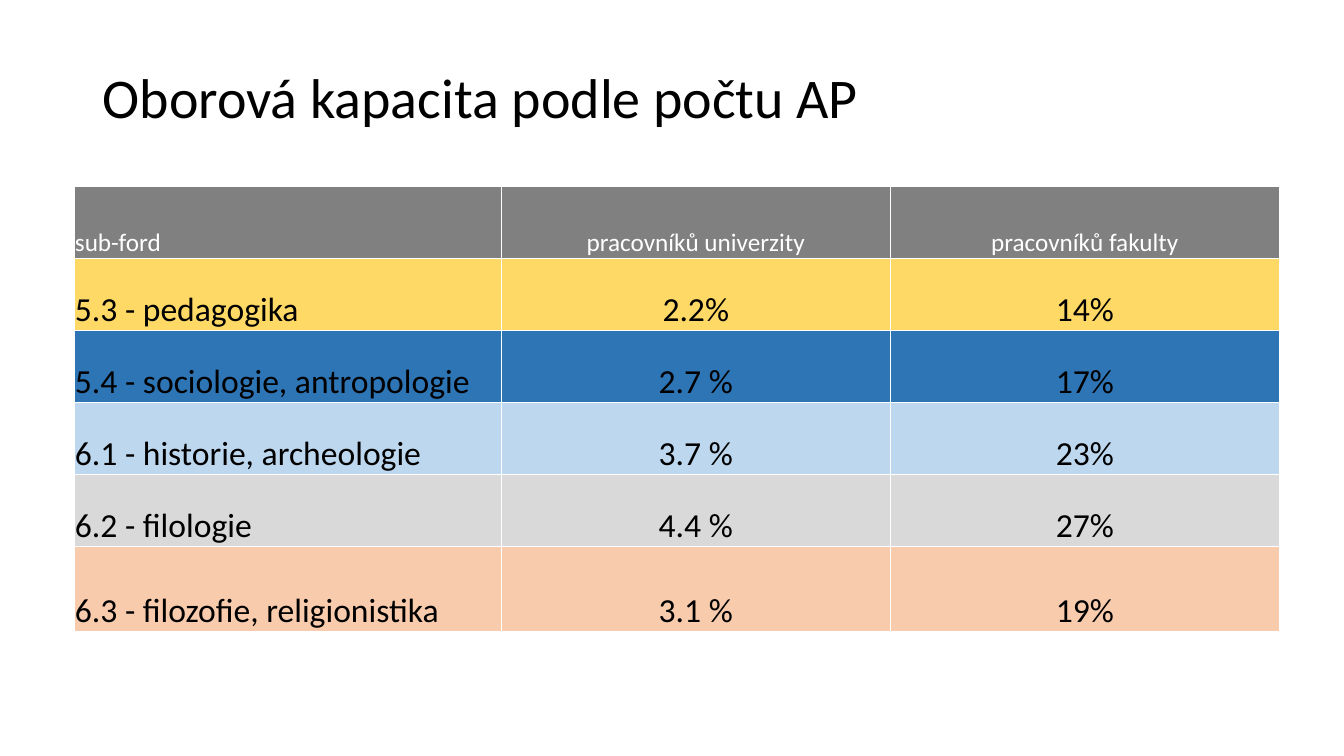
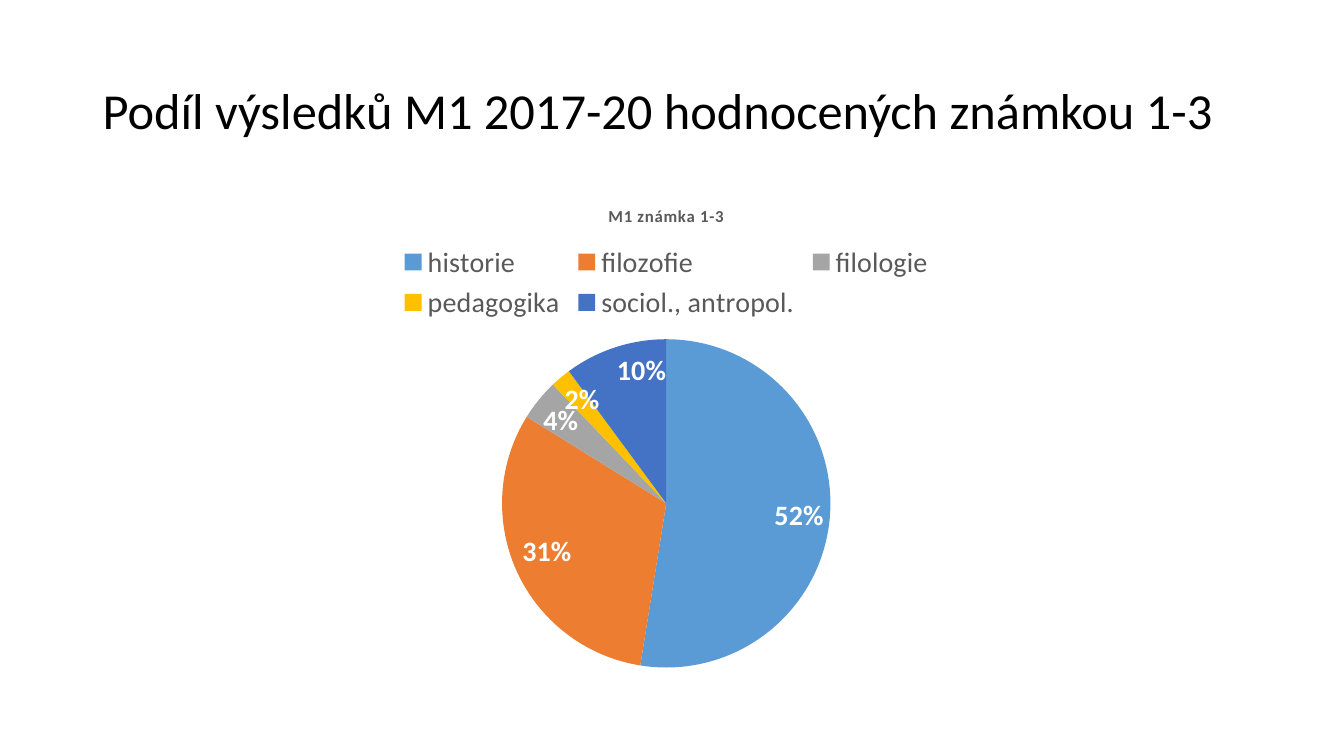
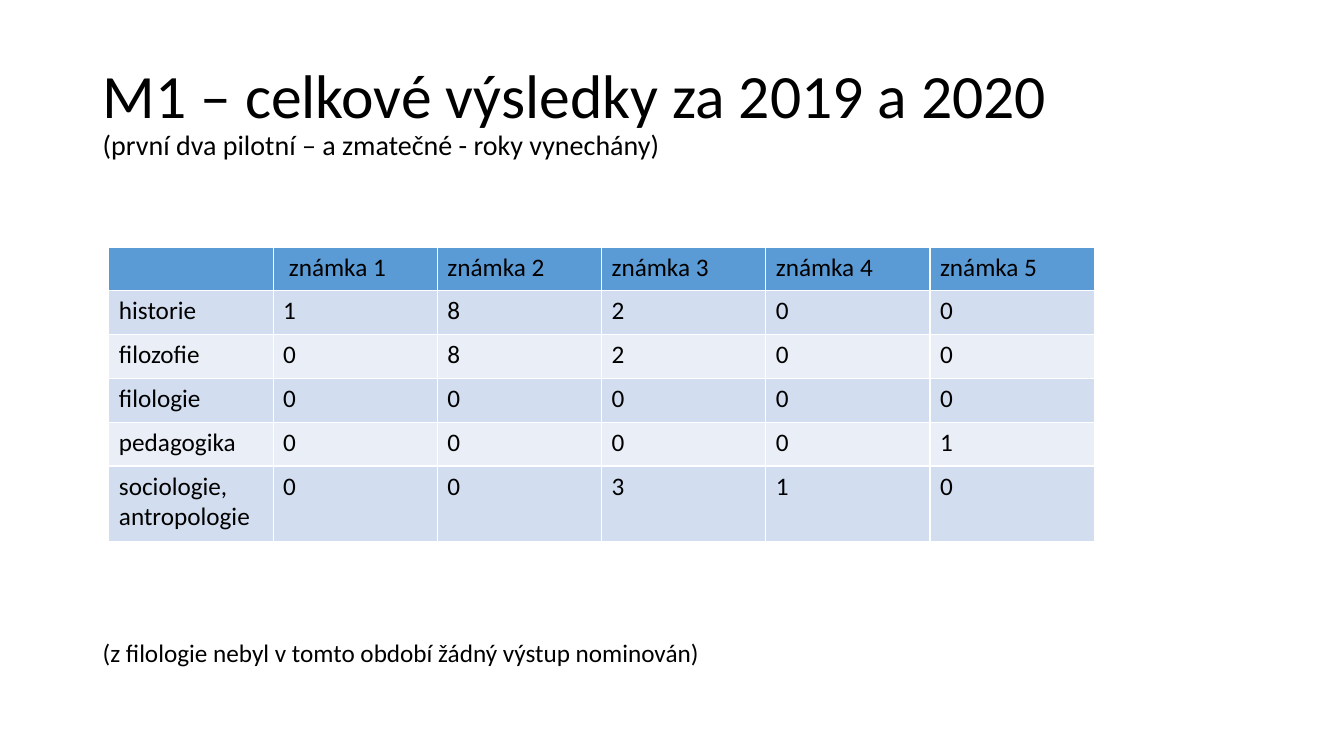
"""Build three slides on staff capacity and M1 results by field of study."""
import lxml.etree
import pptx
import pptx.chart.data
import pptx.dml.color
import pptx.enum.chart
import pptx.enum.text
import pptx.oxml.ns
import pptx.util

FONT = "Calibri"
BLACK, WHITE, GRAY = "000000", "FFFFFF", "595959"
BLUE, LIGHT_BLUE, PALE_BLUE = "5B9BD5", "D2DEEF", "EAEFF7"
LEFT, TOP, WIDTH, CONTENT_TOP = 6.9, 5.33, 86.25, 24.67

presentation = pptx.Presentation()
presentation.slide_width = pptx.util.Inches(13.33)
presentation.slide_height = pptx.util.Inches(7.5)
column_unit = presentation.slide_width / 100
row_unit = presentation.slide_height / 100


def color(hex_string):
    """Return the colour of a hex string."""
    return pptx.dml.color.RGBColor.from_string(hex_string)


def style(font, size, hex_string, bold=False):
    """Give a font the shared typeface with a size, colour and weight."""
    font.name = FONT
    font.size = pptx.util.Pt(size)
    font.bold = bold
    font.color.rgb = color(hex_string)


slides = [presentation.slides.add_slide(presentation.slide_layouts[6]) for _ in range(3)]
capacity_slide, share_slide, results_slide = slides

texts = [
    (capacity_slide, TOP, 15.87, "Oborová kapacita podle počtu AP", [40]),
    (share_slide, TOP, 19.33, "Podíl výsledků M1 2017-20 hodnocených známkou 1-3", [36]),
    (results_slide, TOP, 19.33,
     "M1 – celkové výsledky za 2019 a 2020\v(první dva pilotní – a zmatečné - roky vynechány)", [44, 20]),
    (results_slide, 83.5, 6, "(z filologie nebyl v tomto období žádný výstup nominován)", [18]),
]
for slide, top, height, text, sizes in texts:
    shape = slide.shapes.add_textbox(
        int(LEFT * column_unit), int(top * row_unit), int(WIDTH * column_unit), int(height * row_unit))
    shape.text_frame.word_wrap = True
    shape.text_frame.vertical_anchor = pptx.enum.text.MSO_ANCHOR.MIDDLE
    paragraph = shape.text_frame.paragraphs[0]
    paragraph.text = text
    paragraph.line_spacing = 0.9
    for run, size in zip(paragraph.runs, sizes):
        style(run.font, size, BLACK)

capacity_rows = [
    ("sub-ford", "pracovníků univerzity", "pracovníků fakulty"),
    ("5.3 - pedagogika", "2.2%", "14%"),
    ("5.4 - sociologie, antropologie", "2.7 %", "17%"),
    ("6.1 - historie, archeologie", "3.7 %", "23%"),
    ("6.2 - filologie", "4.4 %", "27%"),
    ("6.3 - filozofie, religionistika", "3.1 %", "19%"),
]
results_rows = [
    ("", " známka 1", "známka 2", "známka 3", "známka 4", "známka 5"),
    ("historie", "1", "8", "2", "0", "0"),
    ("filozofie", "0", "8", "2", "0", "0"),
    ("filologie", "0", "0", "0", "0", "0"),
    ("pedagogika", "0", "0", "0", "0", "1"),
    ("sociologie, antropologie", "0", "0", "3", "1", "0"),
]
align = pptx.enum.text.PP_ALIGN
anchor = pptx.enum.text.MSO_ANCHOR
tables = [
    dict(slide=capacity_slide, left=5.5, top=CONTENT_TOP, rows=capacity_rows,
         widths=[31.8, 28.95, 28.95], heights=[9.52] * 5 + [11.3],
         fills=["808080", "FFD966", "2E75B6", "BDD7EE", "D9D9D9", "F8CBAD"],
         header=(18, WHITE), body=(24, BLACK), margins=(0.01, 0.01, 0.01, 0),
         anchor=anchor.BOTTOM, align=align.CENTER),
    dict(slide=results_slide, left=8.1, top=32.67, rows=results_rows,
         widths=[12.22] * 6, heights=[5.8] * 5 + [10],
         fills=[BLUE] + [LIGHT_BLUE, PALE_BLUE] * 2 + [LIGHT_BLUE],
         header=(18, BLACK), body=(18, BLACK), margins=(0.1, 0.05, 0.1, 0.05),
         anchor=anchor.TOP, align=align.LEFT),
]
for layout in tables:
    shape = layout["slide"].shapes.add_table(
        len(layout["rows"]), len(layout["widths"]),
        int(layout["left"] * column_unit), int(layout["top"] * row_unit),
        int(sum(layout["widths"]) * column_unit), int(sum(layout["heights"]) * row_unit))
    table = shape.table
    table.first_row = table.horz_banding = False
    for column, width in zip(table.columns, layout["widths"]):
        column.width = int(width * column_unit)
    for row_index, values in enumerate(layout["rows"]):
        table.rows[row_index].height = int(layout["heights"][row_index] * row_unit)
        for column_index, value in enumerate(values):
            cell = table.cell(row_index, column_index)
            cell.fill.solid()
            cell.fill.fore_color.rgb = color(layout["fills"][row_index])
            cell.vertical_anchor = layout["anchor"]
            cell.margin_left, cell.margin_top, cell.margin_right, cell.margin_bottom = map(
                pptx.util.Inches, layout["margins"])
            paragraph = cell.text_frame.paragraphs[0]
            paragraph.text = value
            paragraph.alignment = layout["align"] if column_index else align.LEFT
            for run in paragraph.runs:
                style(run.font, *layout["body" if row_index else "header"])
            properties = cell._tc.get_or_add_tcPr()
            for position, side in enumerate(("lnL", "lnR", "lnT", "lnB")):
                border = lxml.etree.Element(pptx.oxml.ns.qn("a:" + side), w=str(pptx.util.Pt(1)))
                fill = lxml.etree.SubElement(border, pptx.oxml.ns.qn("a:solidFill"))
                lxml.etree.SubElement(fill, pptx.oxml.ns.qn("a:srgbClr"), val=WHITE)
                properties.insert(position, border)

chart_data = pptx.chart.data.CategoryChartData()
chart_data.categories = ["historie", "filozofie", "filologie", "pedagogika", "sociol., antropol."]
chart_data.add_series("M1 známka 1-3", [52, 31, 4, 2, 10])
chart = share_slide.shapes.add_chart(
    pptx.enum.chart.XL_CHART_TYPE.PIE, int(6 * column_unit), int(CONTENT_TOP * row_unit),
    int(87.15 * column_unit), int(65.47 * row_unit), chart_data).chart
style(chart.font, 10, BLACK)

chart.has_title = True
paragraph = chart.chart_title.text_frame.paragraphs[0]
paragraph.text = "M1 známka 1-3"
style(paragraph.runs[0].font, 12, GRAY, bold=True)
paragraph.runs[0]._r.get_or_add_rPr().set("spc", "50")
chart.chart_title.include_in_layout = False

chart.has_legend = True
chart.legend.position = pptx.enum.chart.XL_LEGEND_POSITION.TOP
chart.legend.include_in_layout = False
style(chart.legend.font, 20, GRAY)

plot = chart.plots[0]
plot.vary_by_categories = True
for point_index, fill_color in enumerate([BLUE, "ED7D31", "A5A5A5", "FFC000", "4472C4"]):
    point = plot.series[0].points[point_index]
    point.format.fill.solid()
    point.format.fill.fore_color.rgb = color(fill_color)
    point.format.line.fill.background()

plot.has_data_labels = True
labels = plot.data_labels
labels.show_value = True
labels.show_percentage = False
labels.number_format = '0"%"'
labels.number_format_is_linked = False
labels.position = pptx.enum.chart.XL_LABEL_POSITION.INSIDE_END
style(labels.font, 20, WHITE, bold=True)

presentation.save("out.pptx")
